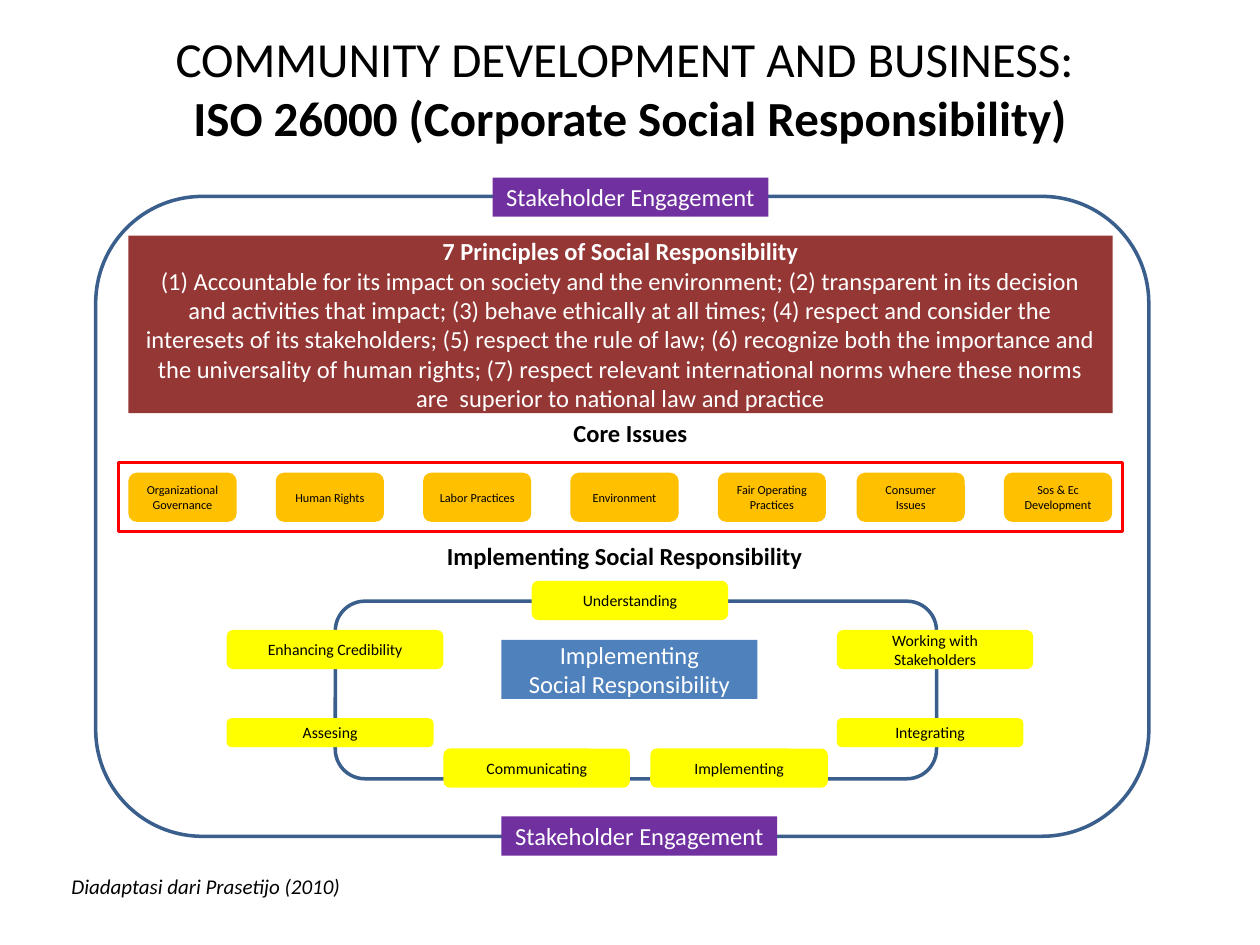
from dataclasses import dataclass

from pptx import Presentation
from pptx import util as u
from pptx.dml.color import RGBColor
from pptx.enum import shapes, text

RECTANGLE = shapes.MSO_SHAPE.RECTANGLE
ROUNDED = shapes.MSO_SHAPE.ROUNDED_RECTANGLE


@dataclass(frozen=True)
class Theme:
    """Colours, font and type sizes of the slide."""
    font: str = "Calibri"
    black: str = "000000"
    white: str = "FFFFFF"
    frame: str = "3A5F8C"
    highlight: str = "FF0000"
    engagement: str = "7030A0"
    principles: str = "953735"
    issue: str = "FFC000"
    step: str = "FFFF00"
    center: str = "4F81BD"
    title_size: int = 28
    body_size: int = 14
    source_size: int = 12
    step_size: int = 9
    issue_size: int = 7
    line_width: int = 2


THEME = Theme()
PRINCIPLES = (
    "(1) Accountable for its impact on society and the environment; "
    "(2) transparent in its decision and activities that impact; "
    "(3) behave ethically at all times; "
    "(4) respect and consider the interesets of its stakeholders; "
    "(5) respect the rule of law; "
    "(6) recognize both the importance and the universality of human rights; "
    "(7) respect relevant international norms where these norms "
    "are  superior to national law and practice"
)
ISSUES = (
    "Organizational Governance", "Human Rights", "Labor Practices", "Environment",
    "Fair Operating Practices", "Consumer Issues", "Sos & Ec Development",
)
STEPS = (
    ("Enhancing Credibility", (4.57, 12.7, 4.37, 0.79)),
    ("Assesing", (4.57, 14.48, 4.17, 0.58)),
    ("Communicating", (8.94, 15.09, 3.76, 0.79)),
    ("Implementing", (13.11, 15.09, 3.58, 0.79)),
    ("Integrating", (16.87, 14.48, 3.76, 0.58)),
    ("Working with Stakeholders", (16.87, 12.7, 3.96, 0.79)),
    ("Understanding", (10.72, 11.71, 3.96, 0.79)),
)


def to_lengths(box):
    """Turn left, top, width and height in centimetres into lengths."""
    return [u.Cm(value) for value in box]


def add_run(paragraph, content, size, color, **formats):
    """Add a run of text with its font format."""
    run = paragraph.add_run()
    run.text = content
    values = {"name": THEME.font, "size": u.Pt(size), **formats}
    for name, value in values.items():
        setattr(run.font, name, value)
    run.font.color.rgb = RGBColor.from_string(color)


def prepare_frame(shape, anchor=text.MSO_ANCHOR.MIDDLE):
    """Set wrapping and anchor, and return the text frame."""
    frame = shape.text_frame
    values = {"word_wrap": True, "vertical_anchor": anchor}
    for name, value in values.items():
        setattr(frame, name, value)
    return frame


def write_lines(frame, lines, size, color):
    """Write centred paragraphs from pairs of text and boldness."""
    for index, (content, bold) in enumerate(lines):
        paragraph = frame.add_paragraph() if index else frame.paragraphs[0]
        paragraph.alignment = text.PP_ALIGN.CENTER
        add_run(paragraph, content, size, color, bold=bold)


def add_outline(slide, kind, box, color):
    """Add an unfilled frame."""
    shape = slide.shapes.add_shape(kind, *to_lengths(box))
    shape.shadow.inherit = False
    shape.fill.background()
    shape.line.color.rgb = RGBColor.from_string(color)
    shape.line.width = u.Pt(THEME.line_width)


def add_block(slide, kind, box, fill, lines, size, color):
    """Add a filled block with centred text."""
    shape = slide.shapes.add_shape(kind, *to_lengths(box))
    shape.shadow.inherit = False
    shape.fill.solid()
    shape.fill.fore_color.rgb = RGBColor.from_string(fill)
    shape.line.fill.background()
    write_lines(prepare_frame(shape), lines, size, color)


def add_heading(slide, box, content):
    """Add a bold section heading."""
    frame = prepare_frame(slide.shapes.add_textbox(*to_lengths(box)))
    write_lines(frame, [(content, True)], THEME.body_size, THEME.black)


def add_title(slide):
    """Add the two-line title."""
    shape = slide.shapes.add_textbox(*to_lengths((1.27, 0.76, 22.86, 2.01)))
    paragraph = prepare_frame(shape).paragraphs[0]
    paragraph.alignment = text.PP_ALIGN.CENTER
    add_run(paragraph, "COMMUNITY DEVELOPMENT AND BUSINESS: ", THEME.title_size, THEME.black)
    paragraph.add_line_break()
    add_run(paragraph, "ISO 26000 (Corporate Social Responsibility)",
            THEME.title_size, THEME.black, bold=True)


def add_source(slide):
    """Add the italic source line."""
    shape = slide.shapes.add_textbox(*to_lengths((1.19, 17.48, 22.86, 0.76)))
    paragraph = prepare_frame(shape, text.MSO_ANCHOR.TOP).paragraphs[0]
    add_run(paragraph, "Diadaptasi dari Prasetijo (2010)",
            THEME.source_size, THEME.black, italic=True)


def add_issues(slide):
    """Add the row of core issues, with the last two set slightly closer."""
    for index, issue in enumerate(ISSUES):
        left = 2.59 + 2.97 * index - (0.17 if index >= 5 else 0)
        add_block(slide, ROUNDED, (left, 9.53, 2.18, 0.99), THEME.issue,
                  [(issue, False)], THEME.issue_size, THEME.black)


def main():
    """Build and save the slide."""
    presentation = Presentation()
    presentation.slide_width, presentation.slide_height = u.Cm(25.4), u.Cm(19.05)
    slide = presentation.slides.add_slide(presentation.slide_layouts[6])

    add_outline(slide, ROUNDED, (1.93, 3.96, 21.23, 12.9), THEME.frame)
    add_outline(slide, ROUNDED, (6.76, 12.12, 12.12, 3.58), THEME.frame)
    add_outline(slide, RECTANGLE, (2.39, 9.32, 20.24, 1.4), THEME.highlight)
    add_title(slide)
    for left, top in ((9.93, 3.58), (10.11, 16.46)):
        add_block(slide, RECTANGLE, (left, top, 5.56, 0.79), THEME.engagement,
                  [("Stakeholder Engagement", False)], THEME.body_size, THEME.white)
    add_block(slide, RECTANGLE, (2.59, 4.75, 19.84, 3.58), THEME.principles,
              [("7 Principles of Social Responsibility", True), (PRINCIPLES, False)],
              THEME.body_size, THEME.white)
    add_heading(slide, (9.93, 8.33, 5.56, 0.79), "Core Issues")
    add_issues(slide)
    add_heading(slide, (8.53, 10.92, 8.13, 0.58), "Implementing Social Responsibility")
    for step, box in STEPS:
        add_block(slide, ROUNDED, box, THEME.step, [(step, False)],
                  THEME.step_size, THEME.black)
    add_block(slide, RECTANGLE, (10.11, 12.9, 5.16, 1.19), THEME.center,
              [("Implementing", False), ("Social Responsibility", False)],
              THEME.body_size, THEME.white)
    add_source(slide)
    presentation.save("out.pptx")


if __name__ == "__main__":
    main()
